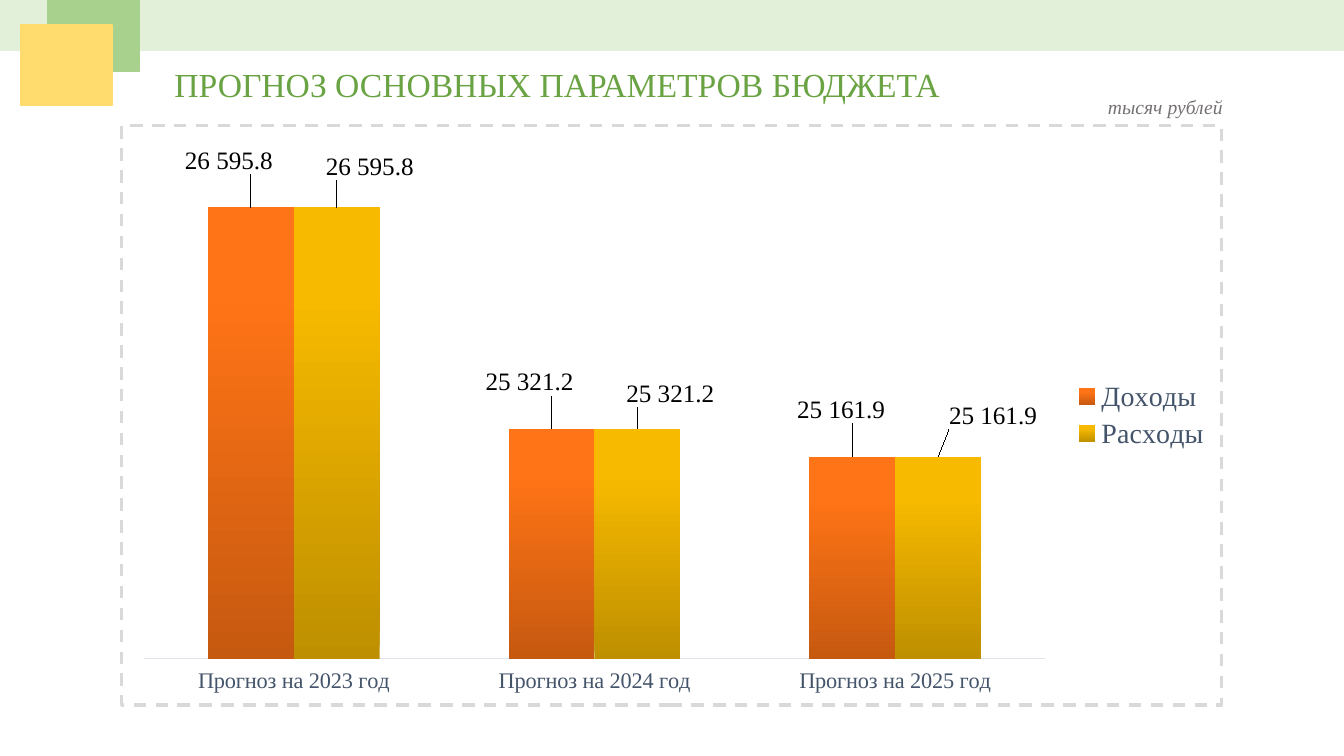
from copy import deepcopy
from dataclasses import dataclass

from pptx import Presentation
from pptx.chart.data import CategoryChartData as ChartData
from pptx.dml.color import RGBColor as Rgb
from pptx.enum.chart import XL_CHART_TYPE as Kind
from pptx.enum.chart import XL_LABEL_POSITION as Spot
from pptx.enum.chart import XL_LEGEND_POSITION as Side
from pptx.enum.chart import XL_TICK_LABEL_POSITION as TickPos
from pptx.enum.chart import XL_TICK_MARK as Tick
from pptx.enum.shapes import MSO_SHAPE as Shape
from pptx.enum.text import MSO_ANCHOR as Anchor
from pptx.enum.text import MSO_AUTO_SIZE as Fit
from pptx.enum.text import PP_ALIGN as Align
from pptx.oxml import parse_xml
from pptx.oxml.ns import nsdecls, qn
from pptx.util import Inches, Pt


@dataclass(frozen=True)
class Theme:
    face: str = "Times New Roman"
    base: str = "Calibri"
    title: str = "6AA343"
    note: str = "767171"
    band: str = "E2F0D9"
    leaf: str = "A9D18E"
    sun: str = "FFDC6D"
    slate: str = "44546A"
    black: str = "000000"
    axis: str = "E0E5EB"
    frame: str = "D9D9D9"
    income: tuple = ("C65910", "FF7416", "FF7517")
    spend: tuple = ("BE8F00", "F7BA00", "F8BB00")
    head_pt: int = 24
    note_pt: int = 14
    axis_pt: int = 16
    label_pt: int = 18
    key_pt: int = 20
    base_pt: int = 10


NUM = r"#\ ##0.0"
YEARS = ("Прогноз на 2023 год", "Прогноз на 2024 год", "Прогноз на 2025 год")
TOTALS = (26595.8, 25321.2, 25161.9)
# Label shifts from the default place, as shares of the chart size
INCOME_MOVES = ((-0.02, -0.05), (-0.02, -0.05), (-0.01, -0.05))
SPEND_MOVES = ((0.03, -0.04), (0.03, -0.03), (0.05, -0.04))


def layout(x, y, size=None):
    """Manual chart layout: a shift, or an inner plot box if a size is given."""
    parts = [("x", x), ("y", y)]
    if size:
        parts = [("layoutTarget", "inner"), ("xMode", "edge"), ("yMode", "edge"),
                 *parts, ("w", size[0]), ("h", size[1])]
    body = "".join(f'<c:{tag} val="{val}"/>' for tag, val in parts)
    return parse_xml(f'<c:layout {nsdecls("c")}><c:manualLayout>{body}'
                     '</c:manualLayout></c:layout>')


class Deck:
    def __init__(self, theme):
        self.theme = theme
        self.prs = Presentation()
        self.prs.slide_width, self.prs.slide_height = Inches(13.33), Inches(7.5)
        self.slide = self.prs.slides.add_slide(self.prs.slide_layouts[5])

    def style(self, font, size, color, face=None):
        font.size, font.name = Pt(size), face or self.theme.face
        font.color.rgb = Rgb.from_string(color)

    def text(self, box, words, size, color, slant=False):
        frame = box.text_frame
        frame.word_wrap, frame.auto_size = False, Fit.SHAPE_TO_FIT_TEXT
        frame.vertical_anchor = Anchor.TOP
        para = frame.paragraphs[0]
        para.alignment = Align.LEFT
        run = para.add_run()
        run.text = words
        self.style(run.font, size, color)
        run.font.italic = slant

    def title(self, words, *at):
        box = self.slide.shapes.title
        box.left, box.top, box.width, box.height = map(Inches, at)
        self.text(box, words, self.theme.head_pt, self.theme.title)

    def note(self, words, *at):
        box = self.slide.shapes.add_textbox(*map(Inches, at))
        self.text(box, words, self.theme.note_pt, self.theme.note, True)

    def block(self, color, *at):
        box = self.slide.shapes.add_shape(Shape.RECTANGLE, *map(Inches, at))
        box.shadow.inherit = False
        box.fill.solid()
        box.fill.fore_color.rgb = box.line.color.rgb = Rgb.from_string(color)
        box.line.width = Pt(1)

    def chart(self, rows, *at):
        t = self.theme
        data = ChartData(number_format=NUM)
        data.categories = YEARS
        for name, *_ in rows:
            data.add_series(name, TOTALS)
        chart = self.slide.shapes.add_chart(
            Kind.COLUMN_CLUSTERED, *map(Inches, at), data).chart
        chart.has_title = False
        self.style(chart.font, t.base_pt, t.black, t.base)

        # Legend and axes
        chart.has_legend = True
        chart.legend.position = Side.RIGHT
        chart.legend.include_in_layout = False
        self.style(chart.legend.font, t.key_pt, t.slate)
        cat, val = chart.category_axis, chart.value_axis
        cat.major_tick_mark = cat.minor_tick_mark = Tick.NONE
        cat.tick_label_position = TickPos.LOW
        cat.format.line.color.rgb = Rgb.from_string(t.axis)
        cat.format.line.width = Pt(0.75)
        self.style(cat.tick_labels.font, t.axis_pt, t.slate)
        val.visible = val.has_major_gridlines = False
        val.minimum_scale, val.maximum_scale = 24000, 27000

        # Columns with three-stop gradients
        plot = chart.plots[0]
        plot.gap_width, plot.overlap = 150, 0
        plot.vary_by_categories = False
        for ser in plot.series:
            ser.format.fill.gradient()
            ser.format.fill.gradient_angle = 90
            self.labels(ser)
        for stops in chart.element.findall(".//" + qn("a:gsLst")):
            stops.append(deepcopy(stops[-1]))
        for ser, (_, colors, _) in zip(plot.series, rows):
            stops = ser.format.fill.gradient_stops
            for stop, color, place in zip(stops, colors, (0, 0.8, 1)):
                stop.color.rgb, stop.position = Rgb.from_string(color), place

        # Shifted value labels
        moves = [move for *_, shifts in rows for move in shifts]
        for item, move in zip(chart.element.findall(".//" + qn("c:dLbl")), moves):
            item.insert(1, layout(*move))
            item.insert(2, parse_xml(
                f'<c:numFmt {nsdecls("c")} formatCode="{NUM}" sourceLinked="0"/>'))

        # Plot box and dashed border
        area = chart.element.find(".//" + qn("c:plotArea"))
        old = area.find(qn("c:layout"))
        if old is not None:
            area.remove(old)
        area.insert(0, layout(0.02, 0.02, (0.82, 0.9)))
        chart.element.find(qn("c:chart")).addnext(parse_xml(
            f'<c:spPr {nsdecls("c", "a")}><a:noFill/><a:ln w="{Pt(2.25)}">'
            f'<a:solidFill><a:srgbClr val="{t.frame}"/></a:solidFill>'
            '<a:prstDash val="dash"/></a:ln></c:spPr>'))

    def labels(self, ser):
        t = self.theme
        tags = ser.data_labels
        tags.show_value, tags.position = True, Spot.OUTSIDE_END
        tags.number_format, tags.number_format_is_linked = NUM, False
        self.style(tags.font, t.label_pt, t.black)
        for i in range(len(TOTALS)):
            tag = ser.points[i].data_label
            tag.position = Spot.OUTSIDE_END
            self.style(tag.font, t.label_pt, t.black)


def main():
    theme = Theme()
    deck = Deck(theme)
    # Heading and corner blocks
    deck.title("ПРОГНОЗ ОСНОВНЫХ ПАРАМЕТРОВ БЮДЖЕТА", 1.63, 0.58, 7.87, 0.5)
    deck.block(theme.band, 0, 0, 13.33, 0.5)
    deck.block(theme.leaf, 0.47, 0, 0.91, 0.71)
    deck.block(theme.sun, 0.21, 0.25, 0.9, 0.8)
    # Budget chart and its unit
    rows = (("Доходы", theme.income, INCOME_MOVES),
            ("Расходы", theme.spend, SPEND_MOVES))
    deck.chart(rows, 1.19, 1.23, 10.94, 5.78)
    deck.note("тысяч рублей", 10.89, 0.89, 1.39, 0.34)
    deck.prs.save("out.pptx")


if __name__ == "__main__":
    main()
